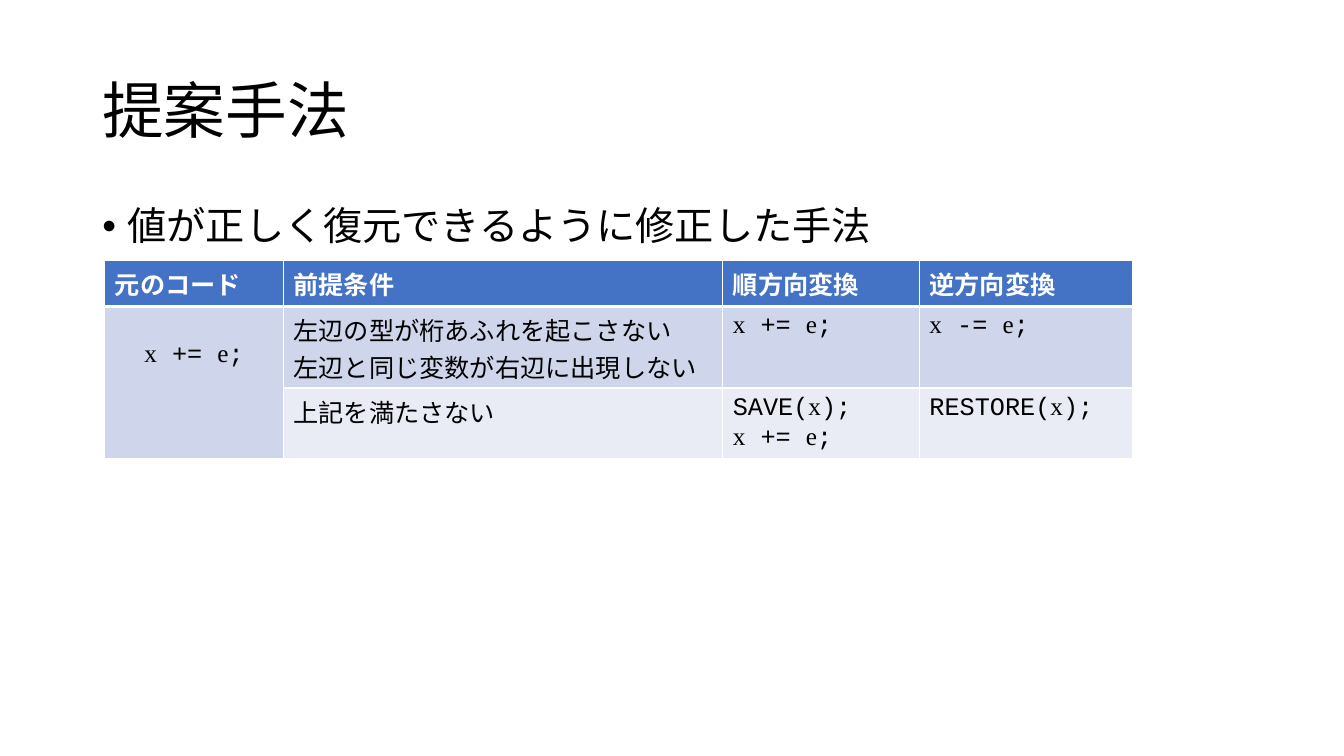
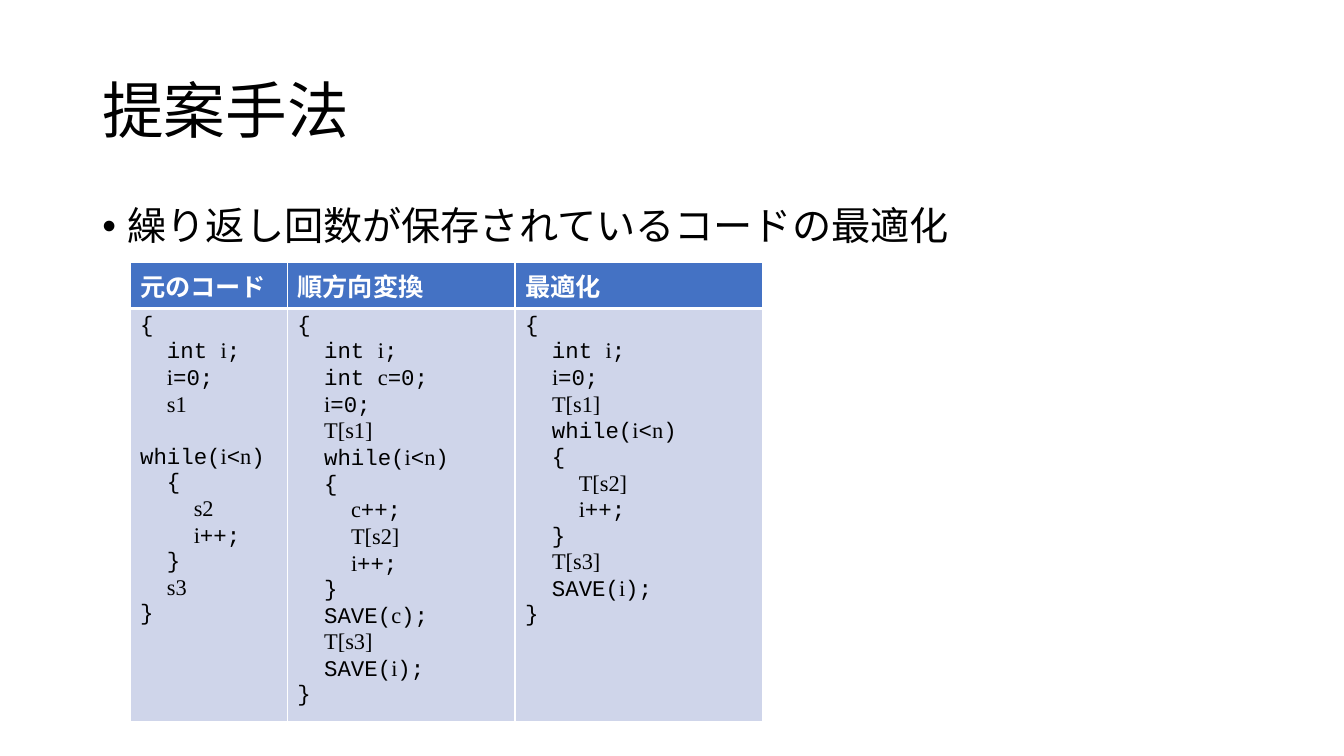
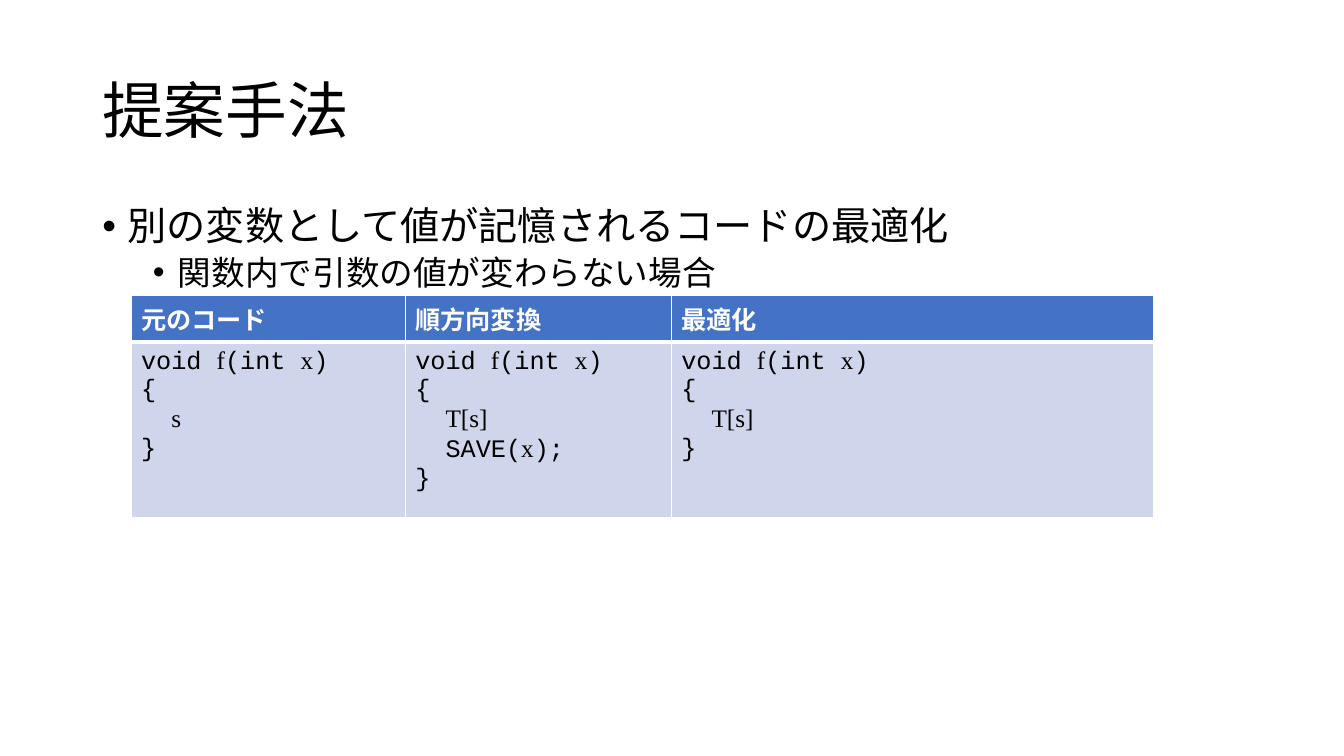
from dataclasses import dataclass

from lxml import etree
from pptx import Presentation
from pptx import util as u
from pptx.dml.color import RGBColor
from pptx.enum import text as t
from pptx.oxml import ns


@dataclass(frozen=True)
class Theme:
    """Colours, fonts, type sizes and line widths."""
    ink: str = "000000"
    white: str = "FFFFFF"
    head: str = "4472C4"
    bands: tuple = ("CFD5EA", "E9EBF5")
    sans: str = "Noto Sans CJK JP"
    mono: str = "Courier New"
    serif: str = "Times New Roman"
    title: int = 44
    levels: tuple = ((28, 0.25, 10), (24, 0.75, 5))
    cell: int = 18
    thin: int = 1
    thick: int = 3


class Deck:
    """Holds the style and the current slide; lengths are percent of the slide."""

    left, span = 6.88, 86.25
    head_row = 6.13

    def __init__(self, theme):
        """Start an empty wide deck."""
        self.theme = theme
        self.file = Presentation()
        self.file.slide_width = u.Inches(13.33)
        self.file.slide_height = u.Inches(7.5)
        self.slide = None

    def wide(self, part):
        """Turn a percentage of the width into a length."""
        return u.Emu(int(self.file.slide_width * part / 100))

    def high(self, part):
        """Turn a percentage of the height into a length."""
        return u.Emu(int(self.file.slide_height * part / 100))

    def style(self, run, size, color, face, bold=False):
        """Format one run."""
        font = run.font
        font.size, font.bold, font.name = u.Pt(size), bold, face
        font.color.rgb = RGBColor.from_string(color)
        if face == self.theme.sans:
            east = etree.SubElement(run._r.get_or_add_rPr(), ns.qn("a:ea"))
            east.set("typeface", face)

    def box(self, top, height, words, anchor):
        """Add a text box across the content width."""
        shape = self.slide.shapes.add_textbox(
            self.wide(self.left), self.high(top), self.wide(self.span), self.high(height))
        frame = shape.text_frame
        frame.word_wrap = True
        frame.vertical_anchor = anchor
        frame.text = words
        for para in frame.paragraphs:
            para.line_spacing = 0.9
        return frame.paragraphs

    def page(self, title, *points):
        """Start a slide with its title and one bullet per level."""
        look = self.theme
        self.slide = self.file.slides.add_slide(self.file.slide_layouts[6])
        head = self.box(5.33, 19.33, title, t.MSO_ANCHOR.MIDDLE)[0]
        self.style(head.runs[0], look.title, look.ink, look.sans)
        paras = self.box(26.7, 63.47, "\n".join(points), t.MSO_ANCHOR.TOP)
        for level, (para, (size, indent, gap)) in enumerate(zip(paras, look.levels)):
            para.level = level
            para.space_before = u.Pt(gap)
            self.bullet(para, indent)
            self.style(para.runs[0], size, look.ink, look.sans)

    def bullet(self, para, indent):
        """Give a paragraph a hanging round bullet."""
        props = para._p.get_or_add_pPr()
        props.set("marL", str(u.Inches(indent)))
        props.set("indent", str(-u.Inches(0.25)))
        etree.SubElement(props, ns.qn("a:buFont")).set("typeface", "Arial")
        etree.SubElement(props, ns.qn("a:buChar")).set("char", "•")

    def edge(self, cell, side, width):
        """Draw one white cell border."""
        line = etree.SubElement(cell._tc.get_or_add_tcPr(), ns.qn("a:ln" + side))
        line.set("w", str(u.Pt(width)))
        fill = etree.SubElement(line, ns.qn("a:solidFill"))
        etree.SubElement(fill, ns.qn("a:srgbClr")).set("val", self.theme.white)

    def fill(self, cell, row, words, size):
        """Paint and write a cell; backticks enclose variables in code."""
        look = self.theme
        thick = {0: "B", 1: "T"}.get(row)
        for side in "LRTB":
            self.edge(cell, side, look.thick if side == thick else look.thin)
        color = look.bands[(row - 1) % 2] if row else look.head
        cell.fill.solid()
        cell.fill.fore_color.rgb = RGBColor.from_string(color)
        faces = (look.mono, look.serif) if "`" in words else (look.sans,)
        cell.text_frame.text = words
        for para in cell.text_frame.paragraphs:
            parts = para.text.split("`")
            para.clear()
            for index, part in enumerate(parts):
                if part:
                    run = para.add_run()
                    run.text = part
                    self.style(run, size if row else look.cell,
                               look.ink if row else look.white,
                               faces[index % len(faces)], row == 0)

    def table(self, left, top, cols, rows, cells, size=Theme.cell):
        """Add a table with a header row and return it."""
        rows = (self.head_row, *rows)
        grid = self.slide.shapes.add_table(
            len(rows), len(cols), self.wide(left), self.high(top),
            self.wide(sum(cols)), self.high(sum(rows))).table
        grid.first_row = grid.horz_banding = False
        for col, width in zip(grid.columns, cols):
            col.width = self.wide(width)
        for row, height in zip(grid.rows, rows):
            row.height = self.high(height)
        for row, line in enumerate(cells):
            for col, words in enumerate(line):
                self.fill(grid.cell(row, col), row, words, size)
        return grid


TITLE = "提案手法"
HEADS = ("元のコード", "順方向変換", "最適化")

LOOP = """{
  int `i`;
  `i`=0;
  `s1`
  while(`i`<`n`)
  {
    `s2`
    `i`++;
  }
  `s3`
}"""

COUNT = """{
  int `i`;
  int `c`=0;
  `i`=0;
  `T[s1]`
  while(`i`<`n`)
  {
    `c`++;
    `T[s2]`
    `i`++;
  }
  SAVE(`c`);
  `T[s3]`
  SAVE(`i`);
}"""

BEST = """{
  int `i`;
  `i`=0;
  `T[s1]`
  while(`i`<`n`)
  {
    `T[s2]`
    `i`++;
  }
  `T[s3]`
  SAVE(`i`);
}"""


def func(*body):
    """Wrap body lines in the sample function."""
    return "\n".join(("void `f`(int `x`)", "{", *("  " + line for line in body), "}"))


def main():
    """Build the three slides."""
    deck = Deck(Theme())

    deck.page(TITLE, "値が正しく復元できるように修正した手法")
    add = "`x` += `e`;"
    grid = deck.table(7.8, 34.4, (13.28, 32.7, 14.63, 15.9), (10.8, 9.2), (
        ("元のコード", "前提条件", "順方向変換", "逆方向変換"),
        (add, "左辺の型が桁あふれを起こさない\n左辺と同じ変数が右辺に出現しない", add, "`x` -= `e`;"),
        ("", "上記を満たさない", "SAVE(`x`);\n" + add, "RESTORE(`x`);")))
    code = grid.cell(1, 0)
    code.merge(grid.cell(2, 0))
    code.margin_top = u.Inches(0.33)
    code.text_frame.paragraphs[0].alignment = t.PP_ALIGN.CENTER

    deck.page(TITLE, "繰り返し回数が保存されているコードの最適化")
    deck.table(9.68, 34.67, (11.7, 16.95, 18.38), (53.5,),
               (HEADS, (LOOP, COUNT, BEST)), size=16)

    deck.page(TITLE, "別の変数として値が記憶されるコードの最適化", "関数内で引数の値が変わらない場合")
    deck.table(9.75, 39.07, (20.4, 19.8, 35.92), (23.3,),
               (HEADS, (func("`s`"), func("`T[s]`", "SAVE(`x`);"), func("`T[s]`"))))

    deck.file.save("out.pptx")


if __name__ == "__main__":
    main()
